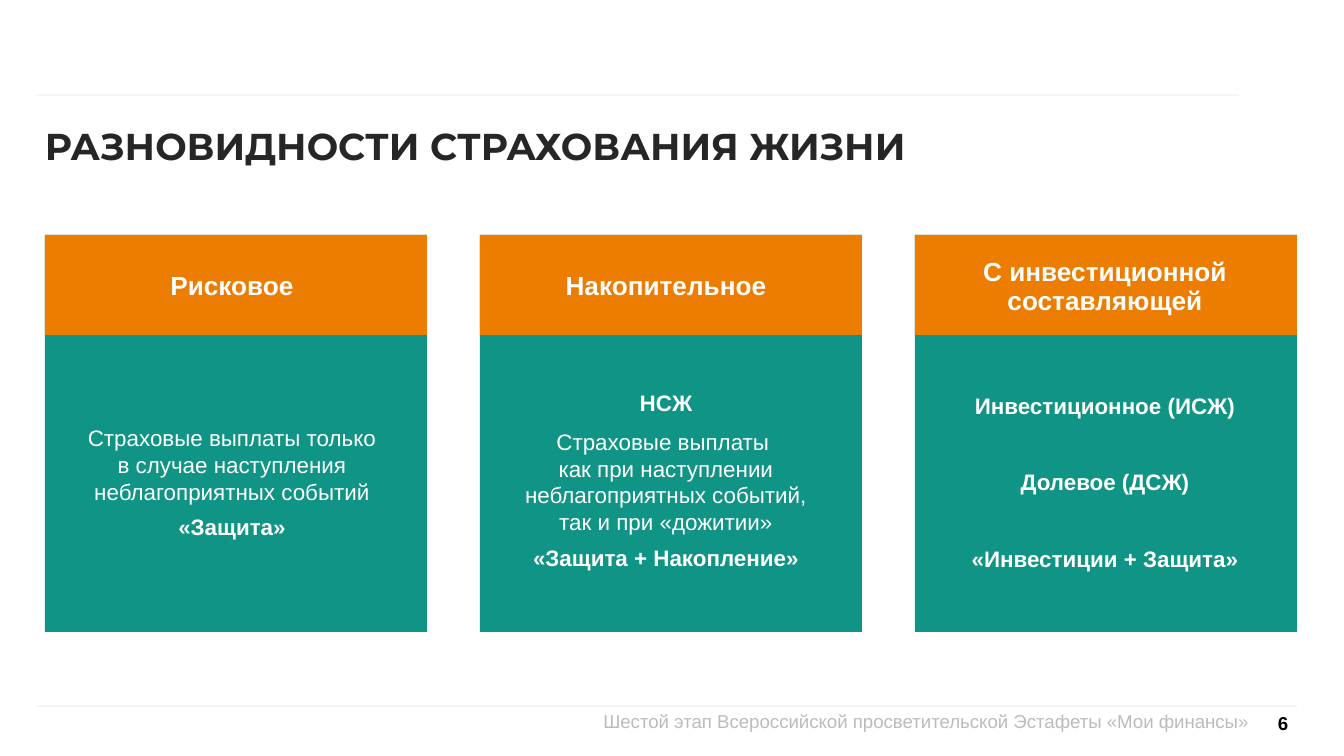
from dataclasses import dataclass

from lxml import etree
from pptx import Presentation
from pptx.dml.color import RGBColor
from pptx.enum.shapes import MSO_CONNECTOR, MSO_SHAPE
from pptx.enum.text import MSO_ANCHOR, PP_ALIGN
from pptx.oxml.ns import qn
from pptx.util import Emu, Pt

RECT = MSO_SHAPE.RECTANGLE
LINE = MSO_CONNECTOR.STRAIGHT
TOP, MID = MSO_ANCHOR.TOP, MSO_ANCHOR.MIDDLE
LEFT, CENTER, RIGHT = PP_ALIGN.LEFT, PP_ALIGN.CENTER, PP_ALIGN.RIGHT

# Slide size in px, and EMU in one px for a width of 10 inches
WIDE, HIGH = 1344, 756
UNIT = 9144000 / WIDE

WHITE, TEAL, ORANGE = "FFFFFF", "0F9485", "ED7D00"

# Card grid
CARD_X, CARD_Y, CARD_W, CARD_H = 45, 235, 382, 397
HEAD_H, STEP = 100, 435


@dataclass
class Para:
    text: str
    bold: bool = True
    gap: float = 0
    lead: float = 0.9


@dataclass
class Card:
    head: str
    head_w: int
    shift: int
    top: int
    width: int
    height: int
    body: list[Para]


CARDS = [
    Card("Рисковое", 238, -4, 424, 301, 117, [
        Para("Страховые выплаты только в случае наступления неблагоприятных событий",
             bold=False, lead=1),
        Para("«Защита»", gap=6.3),
    ]),
    Card("Накопительное", 238, -5, 392, 290, 180, [
        Para("НСЖ"),
        Para("Страховые выплаты \vкак при наступлении неблагоприятных событий, "
             "так и при «дожитии»", bold=False, gap=6.3, lead=1),
        Para("«Защита + Накопление»", gap=6.3),
    ]),
    Card("С инвестиционной составляющей", 333, -1, 392, 313, 181, [
        Para("Инвестиционное (ИСЖ)", lead=1),
        Para("Долевое (ДСЖ)", gap=26.6, lead=1),
        Para("«Инвестиции + Защита»", gap=26.6, lead=1),
    ]),
]


def px(n: float) -> Emu:
    return Emu(round(n * UNIT))


def color(code: str) -> RGBColor:
    return RGBColor.from_string(code)


def write(slide, x: float, y: int, w: int, h: int, paras: list[Para], *,
          size: int = 12, font: str = "Arial", ink: str = WHITE,
          align=CENTER, anchor=TOP, inset: int = 0, wrap: bool = True) -> None:
    frame = slide.shapes.add_textbox(px(x), px(y), px(w), px(h)).text_frame
    frame.word_wrap = wrap
    frame.vertical_anchor = anchor
    frame.margin_left = frame.margin_right = px(inset)
    frame.margin_top = frame.margin_bottom = px(inset)
    for i, item in enumerate(paras):
        para = frame.add_paragraph() if i else frame.paragraphs[0]
        para.text = item.text
        para.alignment = align
        para.line_spacing = item.lead
        if item.gap:
            para.space_before = Pt(item.gap)
        for run in para.runs:
            run.font.name = font
            run.font.size = Pt(size)
            run.font.bold = item.bold
            run.font.color.rgb = color(ink)
        # A line break needs its own text size
        for mark in para._p.findall(qn("a:br")):
            etree.SubElement(mark, qn("a:rPr"), sz=str(size * 100))


def block(slide, x: int, y: int, w: int, h: int, fill: str) -> None:
    shape = slide.shapes.add_shape(RECT, px(x), px(y), px(w), px(h))
    shape.shadow.inherit = False
    shape.fill.solid()
    shape.fill.fore_color.rgb = color(fill)
    shape.line.fill.background()


def rule(slide, x: int, y: int, end: int) -> None:
    line = slide.shapes.add_connector(LINE, px(x), px(y), px(end), px(y))
    line.line.color.rgb = color("F5F5F5")
    line.line.width = Pt(1)
    etree.SubElement(line._element.spPr, qn("a:effectLst"))


def draw(slide, card: Card, x: int) -> None:
    mid = x + CARD_W / 2 + card.shift
    block(slide, x, CARD_Y, CARD_W, CARD_H, TEAL)
    block(slide, x, CARD_Y, CARD_W, HEAD_H, ORANGE)
    write(slide, mid - card.head_w / 2, 250, card.head_w, 75,
          [Para(card.head)], size=14, anchor=MID)
    write(slide, mid - card.width / 2, card.top,
          card.width, card.height, card.body)


def main() -> None:
    deck = Presentation()
    deck.slide_width, deck.slide_height = px(WIDE), px(HIGH)
    slide = deck.slides.add_slide(deck.slide_layouts[6])

    # Rules and footer
    rule(slide, 36, 95, 1239)
    rule(slide, 36, 706, 1297)
    write(slide, 481, 710, 767, 47,
          [Para("Шестой этап Всероссийской просветительской Эстафеты «Мои финансы»",
                bold=False, lead=1)],
          size=10, ink="B9BCBF", align=RIGHT)
    write(slide, 1270, 704, 26, 38, [Para("6", lead=1)], size=10, ink="000000",
          align=RIGHT, anchor=MID, inset=8, wrap=False)

    # Title
    write(slide, 45, 128, 930, 44, [Para("РАЗНОВИДНОСТИ СТРАХОВАНИЯ ЖИЗНИ")],
          size=20, font="Montserrat", ink="262626", align=LEFT)

    # Cards
    for i, card in enumerate(CARDS):
        draw(slide, card, CARD_X + i * STEP)

    deck.save("out.pptx")


if __name__ == "__main__":
    main()
